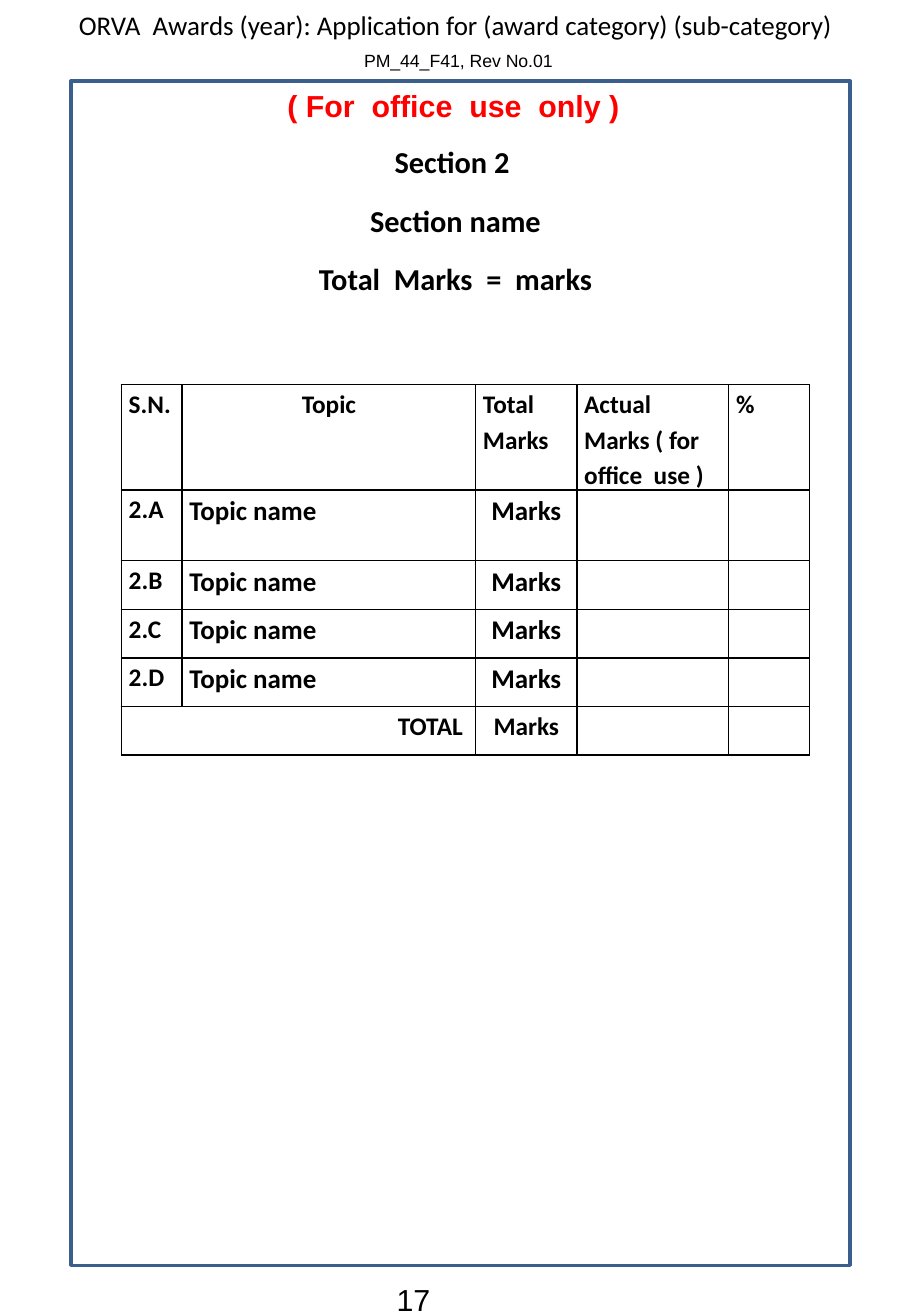
from lxml.etree import SubElement
from pptx import Presentation
from pptx.dml.color import RGBColor
from pptx.enum.shapes import MSO_SHAPE
from pptx.enum.text import MSO_ANCHOR, MSO_AUTO_SIZE, PP_ALIGN as Align
from pptx.oxml.ns import qn
from pptx.util import Inches, Pt

BLACK = RGBColor(0x00, 0x00, 0x00)
RED = RGBColor(0xFF, 0x00, 0x00)
FRAME_BLUE = RGBColor(0x3A, 0x5F, 0x8C)

# The page is a grid of 90 columns by 130 rows
CELL = Inches(1 / 12)
PAGE_COLUMNS, PAGE_ROWS = 90, 130

HEADER_FONT = {"name": "Calibri", "size": Pt(16), "bold": False}
FORM_FONT = {"name": "Arial", "size": Pt(10.5), "bold": False}
PAGE_FONT = {"name": "Arial", "size": Pt(18), "bold": False}
OFFICE_FONT = {"name": "Arial", "size": Pt(18), "bold": True}
SECTION_FONT = {"name": "Calibri", "size": Pt(18), "bold": True}
LABEL_FONT = {"name": "Calibri", "size": Pt(15), "bold": True}
TOPIC_FONT = {"name": "Calibri", "size": Pt(16), "bold": True}

CENTERED = {"alignment": Align.CENTER}
SPACED = {"line_spacing": 1.15, "space_after": Pt(10)}
CELL_FORMAT = {"margin_left": Inches(0.06), "margin_right": Inches(0.06),
               "margin_top": 0, "margin_bottom": 0}

COLUMN_WIDTHS = [6, 29, 10, 15, 8]
ROW_HEIGHTS = [10.4, 7, 4.8, 4.8, 4.8, 4.8]
HEADINGS = ["S.N.", "Topic", "Total Marks", "Actual Marks ( for office  use )", "%"]
TOPIC_ROWS = [[f"2.{letter}", "Topic name", "Marks"] for letter in "ABCD"]


def grid(*lengths):
    return [int(length * CELL) for length in lengths]


def apply(target, *formats):
    for values in formats:
        for name, value in values.items():
            setattr(target, name, value)


def add_run(paragraph, text, font, color=BLACK):
    run = paragraph.add_run()
    run.text = text
    apply(run.font, font)
    run.font.color.rgb = color


def add_text(slide, box, lines, font, color=BLACK, **paragraph_format):
    frame = slide.shapes.add_textbox(*grid(*box)).text_frame
    frame.word_wrap = True
    for index, line in enumerate(lines):
        paragraph = frame.add_paragraph() if index else frame.paragraphs[0]
        apply(paragraph, paragraph_format)
        add_run(paragraph, line, font, color)


def set_header(slide):
    title = slide.shapes.title
    title.left, title.top, title.width, title.height = grid(0, 0.25, PAGE_COLUMNS, 7.7)
    frame = title.text_frame
    apply(frame, {"vertical_anchor": MSO_ANCHOR.TOP, "auto_size": MSO_AUTO_SIZE.NONE})
    award, form = frame.paragraphs[0], frame.add_paragraph()
    for paragraph in (award, form):
        apply(paragraph, CENTERED)
    add_run(award, "ORVA  Awards (year): Application for (award category) (sub-category)",
            HEADER_FONT)
    add_run(form, " ", HEADER_FONT)
    add_run(form, "PM_44_F41, Rev No.01", FORM_FONT)


def format_cell(cell):
    apply(cell, CELL_FORMAT)
    cell.fill.background()
    properties = cell._tc.get_or_add_tcPr()
    for position, side in enumerate(("lnL", "lnR", "lnT", "lnB")):
        border = SubElement(properties, qn(f"a:{side}"), w=str(Pt(1)))
        fill = SubElement(border, qn("a:solidFill"))
        SubElement(fill, qn("a:srgbClr"), val=str(BLACK))
        properties.insert(position, border)


def fill_cell(cell, text, font, alignment):
    paragraph = cell.text_frame.paragraphs[0]
    apply(paragraph, SPACED, {"alignment": alignment})
    add_run(paragraph, text, font)


def add_marks_table(slide):
    box = grid(12, 38, sum(COLUMN_WIDTHS), sum(ROW_HEIGHTS))
    table = slide.shapes.add_table(len(ROW_HEIGHTS), len(COLUMN_WIDTHS), *box).table
    apply(table, {"first_row": False, "horz_banding": False})
    for column, width in zip(table.columns, grid(*COLUMN_WIDTHS)):
        column.width = width
    for row, height in zip(table.rows, grid(*ROW_HEIGHTS)):
        row.height = height
    for cell in table.iter_cells():
        format_cell(cell)

    # Heading row
    for column, heading in enumerate(HEADINGS):
        alignment = Align.CENTER if heading == "Topic" else Align.LEFT
        fill_cell(table.cell(0, column), heading, LABEL_FONT, alignment)

    # Topic rows
    styles = [(LABEL_FONT, Align.LEFT), (TOPIC_FONT, Align.LEFT), (TOPIC_FONT, Align.CENTER)]
    for row, texts in enumerate(TOPIC_ROWS, start=1):
        for column, (text, style) in enumerate(zip(texts, styles)):
            fill_cell(table.cell(row, column), text, *style)

    # Total row
    last = len(ROW_HEIGHTS) - 1
    table.cell(last, 0).merge(table.cell(last, 1))
    fill_cell(table.cell(last, 0), "TOTAL ", LABEL_FONT, Align.RIGHT)
    fill_cell(table.cell(last, 2), "Marks", LABEL_FONT, Align.CENTER)


def add_page_frame(slide):
    frame = slide.shapes.add_shape(MSO_SHAPE.RECTANGLE, *grid(7, 8, 77, 117))
    frame.shadow.inherit = False
    frame.fill.background()
    frame.line.color.rgb = FRAME_BLUE
    frame.line.width = Pt(2)


def main():
    presentation = Presentation()
    presentation.slide_width, presentation.slide_height = grid(PAGE_COLUMNS, PAGE_ROWS)
    slide = presentation.slides.add_slide(presentation.slide_layouts[5])

    # Page number and header
    add_text(slide, (38, 126, 17, 4.8), ["17"], PAGE_FONT)
    set_header(slide)

    # Section heading and marks
    add_text(slide, (13, 13, 64, 17),
             ["Section 2 ", "Section name", "Total  Marks  =  marks"],
             SECTION_FONT, **CENTERED, **SPACED)
    add_marks_table(slide)

    # Office note and frame
    add_text(slide, (27, 8, 35.6, 4.8), ["( For  office  use  only )"],
             OFFICE_FONT, RED, **CENTERED)
    add_page_frame(slide)

    presentation.save("out.pptx")


if __name__ == "__main__":
    main()
